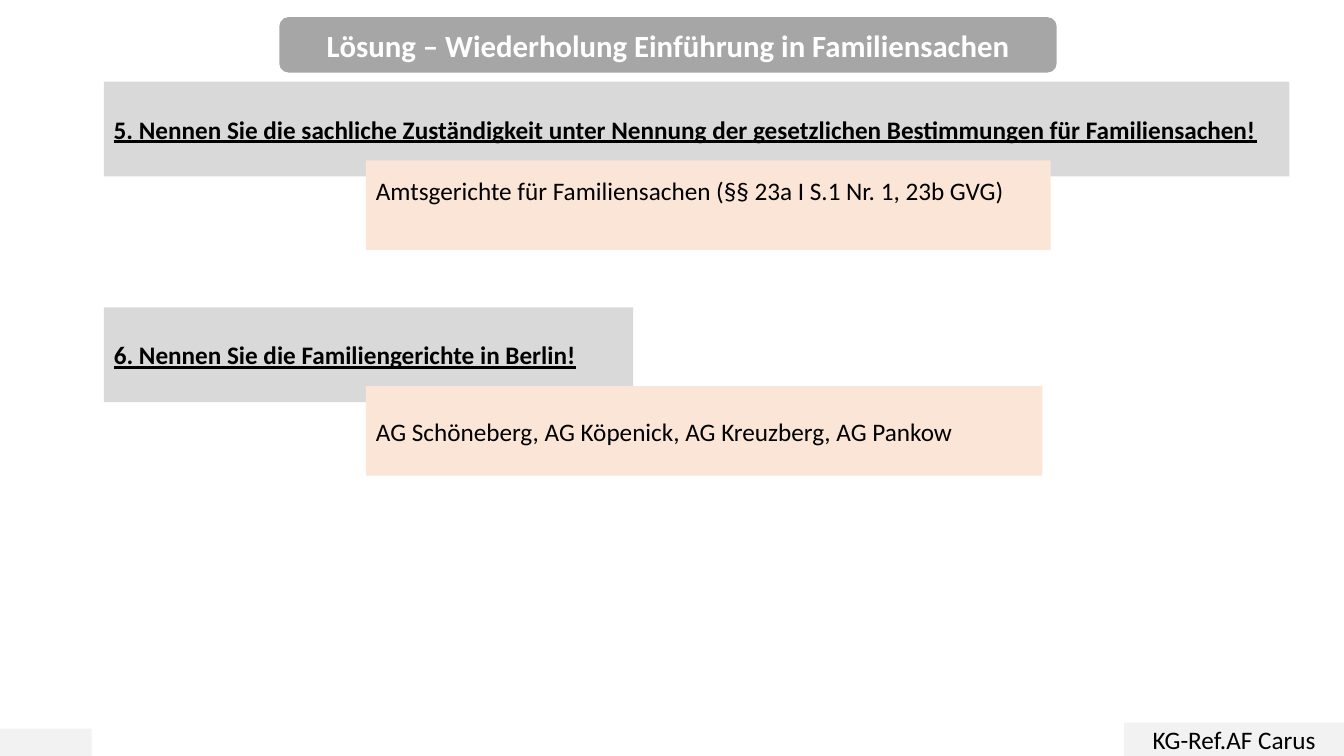
from pptx import Presentation
from pptx.dml.color import RGBColor
from pptx.enum.shapes import MSO_SHAPE
from pptx.enum.text import MSO_ANCHOR, PP_ALIGN
from pptx.util import Inches, Pt

WIDTH, HEIGHT = 13.33, 7.5
BLACK = RGBColor(0x00, 0x00, 0x00)
WHITE = RGBColor(0xFF, 0xFF, 0xFF)
TITLE_GRAY = RGBColor(0xA6, 0xA6, 0xA6)
QUESTION_GRAY = RGBColor(0xD9, 0xD9, 0xD9)
FOOTER_GRAY = RGBColor(0xF2, 0xF2, 0xF2)
PEACH = RGBColor(0xFB, 0xE5, 0xD6)

BODY = {"name": "Calibri", "size": Pt(18), "bold": False, "underline": False}
QUESTION = {**BODY, "bold": True, "underline": True}
TITLE = {**BODY, "size": Pt(22), "bold": True}

# Columns and heights shared by the question and answer boxes
QUESTION_LEFT, QUESTION_HEIGHT = 1.03, 0.94
ANSWER_LEFT, ANSWER_HEIGHT = 3.63, 0.89
ANSWER_DROP = 0.78

deck = Presentation()
deck.slide_width, deck.slide_height = Inches(WIDTH), Inches(HEIGHT)
page = deck.slides.add_slide(deck.slide_layouts[6])


def add_box(left, top, width, height, fill, text="", style=BODY, color=BLACK,
            align=PP_ALIGN.LEFT, kind=MSO_SHAPE.RECTANGLE):
    box = page.shapes.add_shape(kind, *map(Inches, (left, top, width, height)))
    box.shadow.inherit = False
    box.fill.solid()
    box.fill.fore_color.rgb = fill
    box.line.fill.background()
    if text:
        frame = box.text_frame
        frame.word_wrap = True
        frame.vertical_anchor = MSO_ANCHOR.MIDDLE
        para = frame.paragraphs[0]
        para.alignment = align
        span = para.add_run()
        span.text = text
        for name, value in style.items():
            setattr(span.font, name, value)
        span.font.color.rgb = color
    return box


# Title
add_box(2.77, 0.17, 7.71, 0.55, TITLE_GRAY,
        "Lösung – Wiederholung Einführung in Familiensachen",
        TITLE, WHITE, PP_ALIGN.CENTER, MSO_SHAPE.ROUNDED_RECTANGLE)

# Questions with their answers: top, widths, texts, room kept below the answer
exercises = [
    (0.81, 11.76, "5. Nennen Sie die sachliche Zuständigkeit unter Nennung der "
     "gesetzlichen Bestimmungen für Familiensachen!",
     6.79, "Amtsgerichte für Familiensachen (§§ 23a I S.1 Nr. 1, 23b GVG)", 0.35),
    (3.05, 5.25, "6. Nennen Sie die Familiengerichte in Berlin!",
     6.71, "AG Schöneberg, AG Köpenick, AG Kreuzberg, AG Pankow", 0.05),
]
for top, question_width, question, answer_width, answer, room in exercises:
    add_box(QUESTION_LEFT, top, question_width, QUESTION_HEIGHT,
            QUESTION_GRAY, question, QUESTION)
    answer_box = add_box(ANSWER_LEFT, top + ANSWER_DROP, answer_width,
                         ANSWER_HEIGHT, PEACH, answer)
    answer_box.text_frame.margin_bottom = Inches(room)

# Footer fields in the bottom corners
for left, width, height, text in [(0, 0.91, 0.27, ""),
                                  (WIDTH - 2.18, 2.18, 0.33, "KG-Ref.AF Carus")]:
    add_box(left, HEIGHT - height, width, height, FOOTER_GRAY, text,
            align=PP_ALIGN.CENTER)

deck.save("out.pptx")
